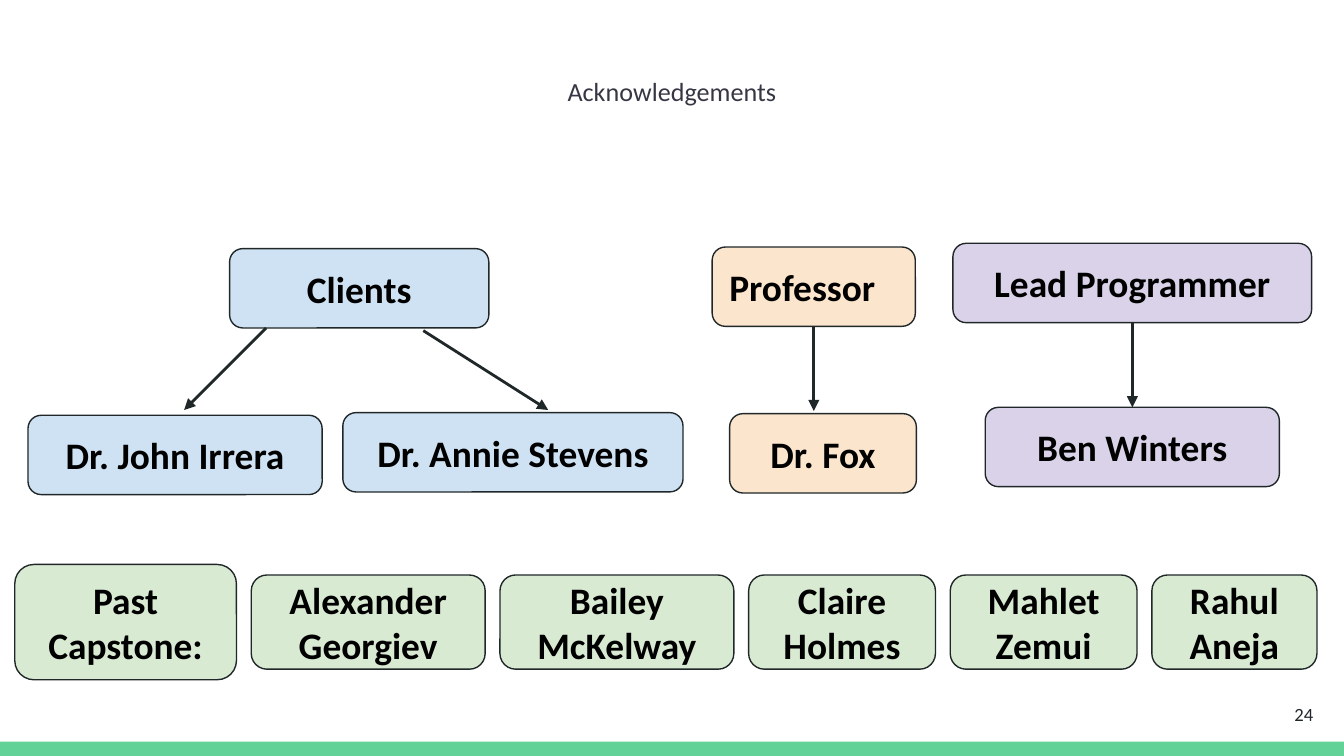
import pptx
import pptx.util
import pptx.dml.color
import pptx.enum.shapes
import pptx.enum.text
import pptx.oxml
import pptx.oxml.ns
from pptx.util import Cm

COLOURS = {
    "bar": "63D297", "title": "353744", "ink": "202729", "text": "000000",
    "blue": "CFE2F3", "orange": "FCE5CD", "purple": "D9D2E9", "green": "D9EAD3",
}
ALIGN = pptx.enum.text.PP_ALIGN
ANCHOR = pptx.enum.text.MSO_ANCHOR
SHAPES = pptx.enum.shapes.MSO_SHAPE
CARD_HEIGHT = 1.5


def colour(name):
    return pptx.dml.color.RGBColor.from_string(COLOURS[name])


def write(shape, text, size, ink, align, anchor, bold=False):
    frame = shape.text_frame
    frame.word_wrap = True
    frame.auto_size = pptx.enum.text.MSO_AUTO_SIZE.NONE
    frame.vertical_anchor = anchor
    frame.text = text
    para = frame.paragraphs[0]
    para.alignment = align
    font = para.runs[0].font
    font.name, font.size, font.bold = "Calibri", pptx.util.Pt(size), bold
    font.color.rgb = colour(ink)


def set_insets(frame, inset):
    frame.margin_left = frame.margin_right = inset
    frame.margin_top = frame.margin_bottom = inset


def add_card(page, text, fill, left, top, width, height=CARD_HEIGHT, align=ALIGN.CENTER):
    card = page.shapes.add_shape(
        SHAPES.ROUNDED_RECTANGLE, Cm(left), Cm(top), Cm(width), Cm(height))
    card.shadow.inherit = False
    card.fill.solid()
    card.fill.fore_color.rgb = colour(fill)
    card.line.color.rgb = colour("ink")
    card.line.width = pptx.util.Pt(0.75)
    set_insets(card.text_frame, Cm(0.25))
    write(card, text, 20, "text", align, ANCHOR.MIDDLE, bold=True)


def add_arrow(page, x1, y1, x2, y2):
    arrow = page.shapes.add_connector(
        pptx.enum.shapes.MSO_CONNECTOR.STRAIGHT, Cm(x1), Cm(y1), Cm(x2), Cm(y2))
    arrow.line.color.rgb = colour("ink")
    arrow.line.width = pptx.util.Pt(1.5)
    head = pptx.oxml.parse_xml(
        f'<a:tailEnd {pptx.oxml.ns.nsdecls("a")} type="triangle"/>')
    arrow.line._get_or_add_ln().append(head)
    effects = pptx.oxml.parse_xml(f'<a:effectLst {pptx.oxml.ns.nsdecls("a")}/>')
    arrow._element.spPr.append(effects)


def add_title(page, text, left, top, width, height):
    title = page.shapes.title
    title.left, title.top, title.width, title.height = map(Cm, (left, top, width, height))
    write(title, text, 14, "title", ALIGN.CENTER, ANCHOR.TOP)


def add_role(page, left, top, fill, role, people, arrows, align=ALIGN.CENTER):
    """Role card above its people; offsets count from the region's corner."""
    name, offset, width = role
    add_card(page, name, fill, left + offset, top, width, align=align)
    for person, x, y, width in people:
        add_card(page, person, fill, left + x, top + y, width)
    for x1, y1, x2, y2 in arrows:
        add_arrow(page, left + x1, top + y1, left + x2, top + y2)


def add_capstone_row(page, left, top, people):
    label_width, label_height, name_height, gap = 4.19, 2.18, 1.78, 0.28
    add_card(page, "Past Capstone:", "green", left, top, label_width, label_height)
    x = left + label_width + gap
    y = top + (label_height - name_height) / 2
    for person, width in people:
        add_card(page, person, "green", x, y, width, name_height)
        x += width + gap


def add_footer(page, left, top, width, height, number):
    bar = page.shapes.add_shape(
        SHAPES.RECTANGLE, Cm(left), Cm(top), Cm(width), Cm(height))
    bar.shadow.inherit = False
    bar.fill.solid()
    bar.fill.fore_color.rgb = colour("bar")
    bar.line.fill.background()
    box = page.shapes.add_textbox(
        Cm(left + width - 1.85), Cm(top - 1.07), Cm(1.52), Cm(1.09))
    set_insets(box.text_frame, Cm(0.25))
    write(box, number, 10, "ink", ALIGN.RIGHT, ANCHOR.MIDDLE)


def main():
    deck = pptx.Presentation()
    deck.slide_width, deck.slide_height = Cm(25.4), Cm(14.29)
    page = deck.slides.add_slide(deck.slide_layouts[5])

    add_footer(page, 0, 14.02, 25.4, 0.27, "24")
    add_title(page, "Acknowledgements", 3.91, 1.3, 17.58, 1.78)

    # Roles and the people who hold them
    add_role(page, 0.53, 4.7, "blue", ("Clients", 3.81, 4.9),
             [("Dr. John Irrera", 0, 3.15, 5.56),
              ("Dr. Annie Stevens", 5.95, 3.1, 6.43)],
             [(4.5, 1.5, 2.95, 3.05), (7.47, 1.55, 9.83, 3.05)])
    add_role(page, 13.46, 4.67, "orange", ("Professor", 0, 3.84),
             [("Dr. Fox", 0.33, 3.15, 3.53)],
             [(1.92, 1.5, 1.92, 3.1)], align=ALIGN.LEFT)
    add_role(page, 18.01, 4.6, "purple", ("Lead Programmer", 0, 6.78),
             [("Ben Winters", 0.61, 3.1, 5.56)],
             [(3.39, 1.5, 3.39, 3.1)])

    # Earlier capstone team
    add_capstone_row(page, 0.28, 10.67, [
        ("Alexander Georgiev", 4.42), ("Bailey McKelway", 4.42),
        ("Claire Holmes", 3.53), ("Mahlet Zemui", 3.53), ("Rahul Aneja", 3.12)])

    deck.save("out.pptx")


if __name__ == "__main__":
    main()
